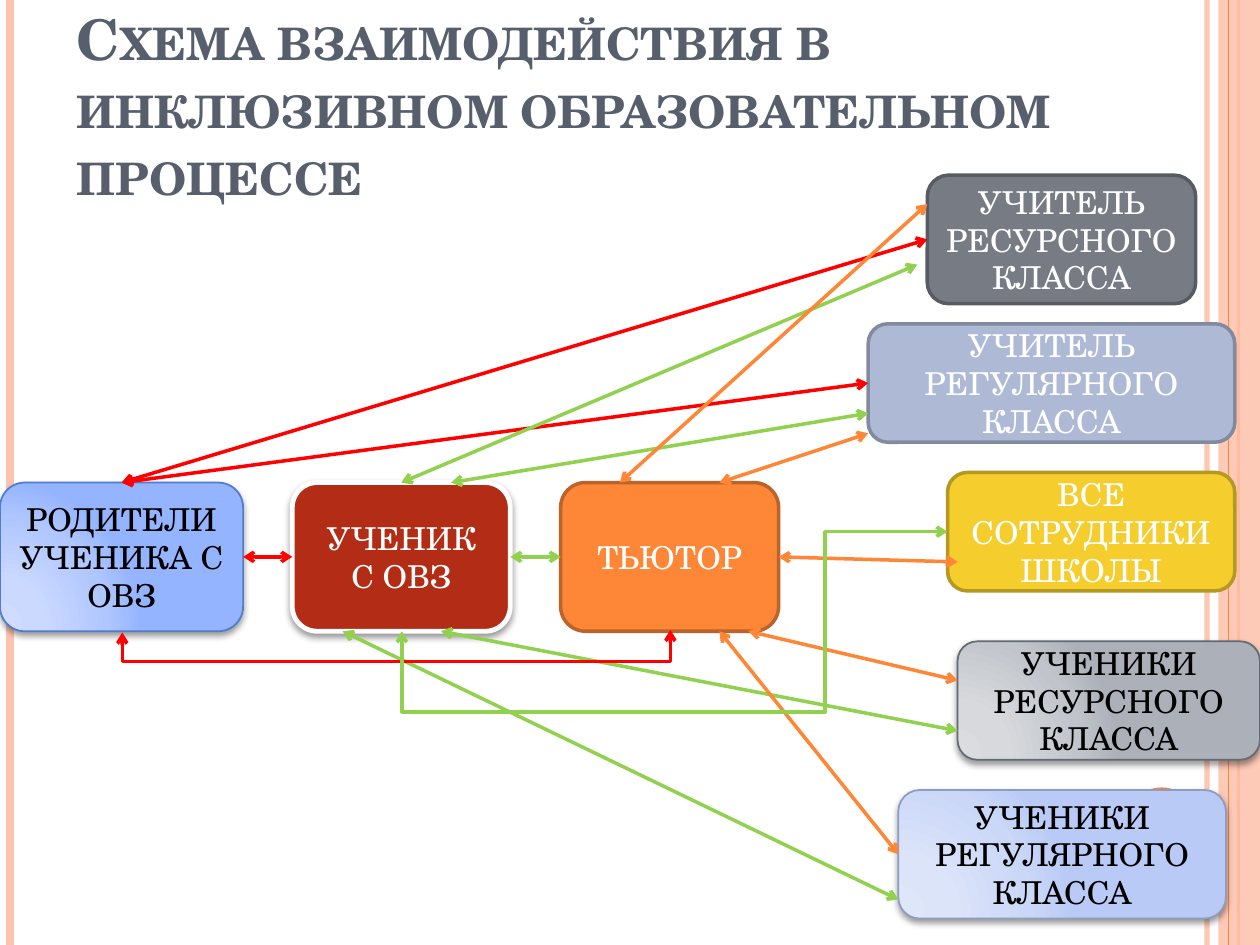
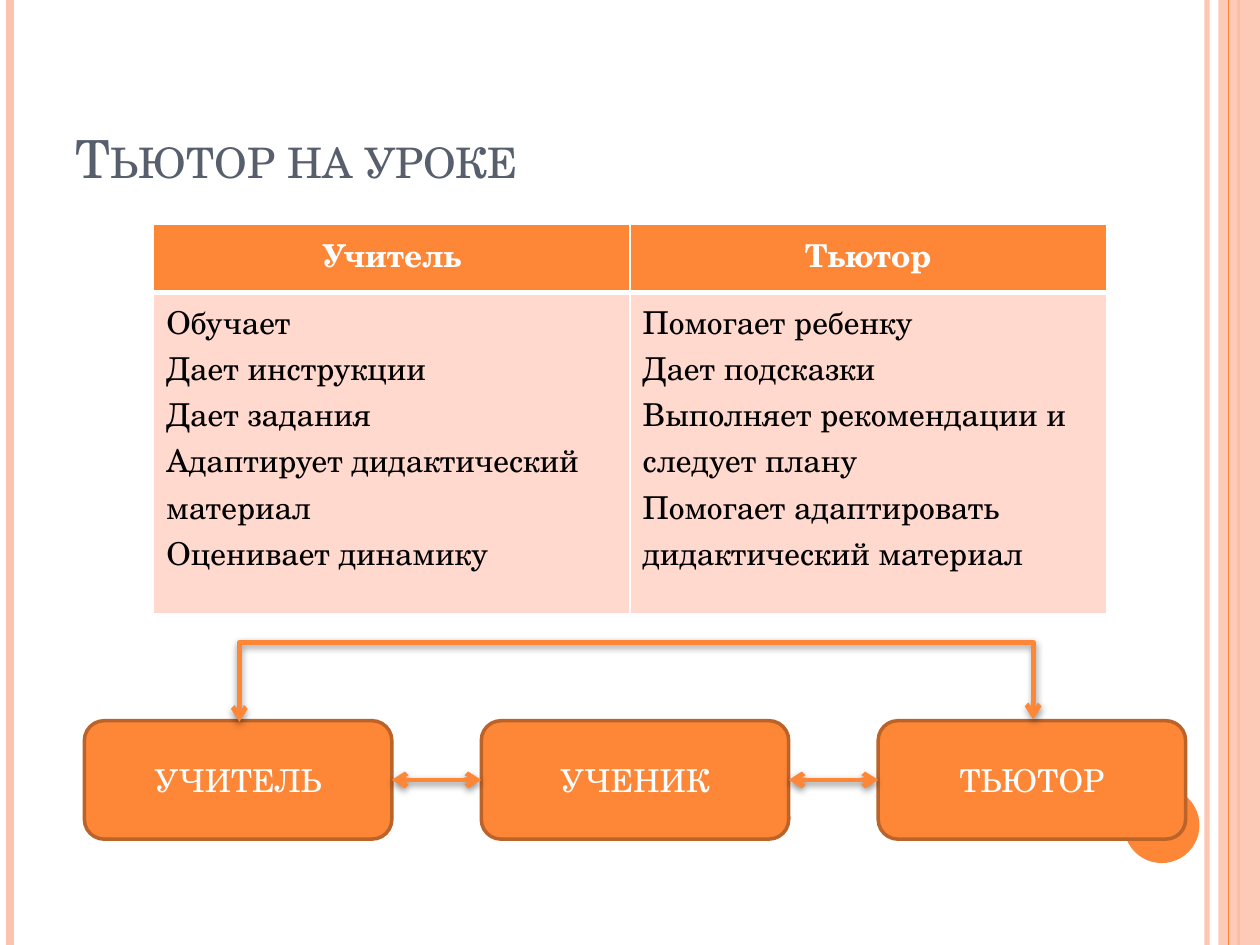
from itertools import pairwise

from lxml import etree
from pptx import Presentation
from pptx.dml.color import RGBColor
from pptx.enum.shapes import MSO_CONNECTOR, MSO_SHAPE
from pptx.enum.text import MSO_ANCHOR, MSO_AUTO_SIZE, PP_ALIGN
from pptx.oxml import parse_xml
from pptx.oxml.ns import nsdecls, qn
from pptx.util import Inches, Pt

# Enum members
LINE, ELBOW = MSO_CONNECTOR.STRAIGHT, MSO_CONNECTOR.ELBOW
ROUND, RECT, OVAL = MSO_SHAPE.ROUNDED_RECTANGLE, MSO_SHAPE.RECTANGLE, MSO_SHAPE.OVAL
LEFT, MID = PP_ALIGN.LEFT, PP_ALIGN.CENTER
BASE, CORE = MSO_ANCHOR.BOTTOM, MSO_ANCHOR.MIDDLE
FIXED = MSO_AUTO_SIZE.NONE

# Sides of a box
TOP, WEST, EAST = 0, 1, 3

# The slide is a grid of 100 columns and 75 rows
COLS, ROWS = 100, 75
FONT = "TeX Gyre Schola"

# Colours
WHITE = RGBColor(0xFF, 0xFF, 0xFF)
BLACK = RGBColor(0x00, 0x00, 0x00)
SLATE = RGBColor(0x57, 0x5F, 0x6D)
PEACH = RGBColor(0xFE, 0xC3, 0xAE)
PALE = RGBColor(0xFF, 0xD9, 0xCE)
ORANGE = RGBColor(0xFE, 0x86, 0x37)
RUST = RGBColor(0xBC, 0x63, 0x29)
RED = RGBColor(0xFF, 0x00, 0x00)
GREEN = RGBColor(0x92, 0xD0, 0x50)
BRICK = RGBColor(0xB3, 0x2C, 0x16)
GREY = RGBColor(0x77, 0x7C, 0x84)
COAL = RGBColor(0x58, 0x5C, 0x62)
STEEL = RGBColor(0xAE, 0xBA, 0xD5)
DUSK = RGBColor(0x81, 0x8A, 0x9E)
GOLD = RGBColor(0xF5, 0xCD, 0x2D)
OLIVE = RGBColor(0xB5, 0x98, 0x21)
BLUE = RGBColor(0x4F, 0x7C, 0xCF)
MIST = RGBColor(0x8D, 0x9C, 0xBF)
LEAD = RGBColor(0x63, 0x6A, 0x74)

# Shades of the glowing boxes, at 0, 30, 75 and 100 percent
STOPS = (0, 30, 75, 100)
SKY = [RGBColor.from_string(c) for c in ("CFDCFF", "CBD9FF", "AFC6FF", "95B4FF")]
ICE = [RGBColor.from_string(c) for c in ("DEE6FA", "DBE4F9", "CAD7F7", "B8CAF5")]
ASH = [RGBColor.from_string(c) for c in ("DADCE0", "D7D9DD", "C1C5CB", "ABB0B9")]


def grid(*cells):
    return [Inches(n / 10) for n in cells]


# Text
def write(frame, text, size=18, color=BLACK, bold=False, align=LEFT, small=False):
    frame.word_wrap = True
    frame.text = text
    for para in frame.paragraphs:
        para.alignment = align
        font = para.runs[0].font
        font.name, font.size, font.bold = FONT, Pt(size), bold
        font.color.rgb = color
        if small:
            para.runs[0]._r.get_or_add_rPr().set("cap", "small")


# Effects
def fade(part, share):
    for tint in part.iter(qn("a:srgbClr")):
        etree.SubElement(tint, qn("a:alpha"), val=str(share * 1000))


def shade(props, alpha, blur, dist):
    props.find(qn("a:effectLst")).append(parse_xml(
        f'<a:outerShdw {nsdecls("a")} blurRad="{Pt(blur)}" dist="{Pt(dist)}" '
        f'dir="5400000" rotWithShape="0"><a:srgbClr val="{BLACK}">'
        f'<a:alpha val="{alpha * 1000}"/></a:srgbClr></a:outerShdw>'))


def glow(shape, tints):
    shape.fill.gradient()
    old = shape._element.spPr.find(qn("a:gradFill"))
    stops = "".join(f'<a:gs pos="{at * 1000}"><a:srgbClr val="{tint}"/></a:gs>'
                    for at, tint in zip(STOPS, tints))
    new = parse_xml(
        f'<a:gradFill {nsdecls("a")} rotWithShape="1"><a:gsLst>{stops}</a:gsLst>'
        '<a:path path="circle"><a:fillToRect l="5000" t="100000" r="120000" '
        'b="10000"/></a:path></a:gradFill>')
    old.getparent().replace(old, new)


# Shapes
def block(slide, kind, place, fill):
    shape = slide.shapes.add_shape(kind, *grid(*place))
    shape.shadow.inherit = False
    if isinstance(fill, list):
        glow(shape, fill)
    else:
        shape.fill.solid()
        shape.fill.fore_color.rgb = fill
    shape.line.fill.background()
    return shape


def box(slide, place, text, fill, edge, width=2, color=WHITE, raised=False):
    shape = block(slide, ROUND, place, fill)
    shape.line.color.rgb = edge
    shape.line.width = Pt(width)
    if raised:
        shade(shape._element.spPr, 40, 4, 2)
    shape.text_frame.vertical_anchor = CORE
    write(shape.text_frame, text, color=color, align=MID)
    return shape


# Lines and arrows
def stroke(line, color, width, heads=False, raised=False):
    line.line.color.rgb = color
    line.line.width = Pt(width)
    props = line._element.spPr
    if heads:
        for end in ("a:headEnd", "a:tailEnd"):
            etree.SubElement(props.find(qn("a:ln")), qn(end), type="arrow")
    etree.SubElement(props, qn("a:effectLst"))
    if raised:
        shade(props, 42, 4, 1.6)


def link(slide, start, end, color, width=2, raised=False):
    """Join two ends, each a grid point or a (box, side) pair."""
    line = slide.shapes.add_connector(LINE, 0, 0, 0, 0)
    if hasattr(start[0], "left"):
        line.begin_connect(*start)
    else:
        line.begin_x, line.begin_y = grid(*start)
    if hasattr(end[0], "left"):
        line.end_connect(*end)
    else:
        line.end_x, line.end_y = grid(*end)
    stroke(line, color, width, True, raised)


def bend(slide, start, end, color, row, col=None, width=2, raised=False):
    """Leave start upright, run along a row and, if given, turn at a column."""
    (x1, y1), (x2, y2) = start, end
    wide, tall = y1 - y2, x2 - x1
    left, top = (x1 + x2 - wide) / 2, (y1 + y2 - tall) / 2
    line = slide.shapes.add_connector(
        ELBOW, *grid(left, top, left + wide, top + tall))
    frame = line._element.spPr.find(qn("a:xfrm"))
    for key, val in (("rot", "5400000"), ("flipH", "1"), ("flipV", "1")):
        frame.set(key, val)
    turns = [(y1 - row) / wide]
    if col is not None:
        turns.append((col - x1) / tall)
    form = line._element.spPr.find(qn("a:prstGeom"))
    form.set("prst", f"bentConnector{2 + len(turns)}")
    guides = form.get_or_add_avLst()
    for i, turn in enumerate(turns, 1):
        etree.SubElement(guides, qn("a:gd"), name=f"adj{i}",
                         fmla=f"val {round(turn * 100000)}")
    stroke(line, color, width, True, raised)


# Shared frame of a slide
def band(slide, col, color, width):
    line = slide.shapes.add_connector(LINE, *grid(col, 0, col, ROWS))
    stroke(line, color, width)
    return line


def start_slide(deck, title, place, **style):
    slide = deck.slides.add_slide(deck.slide_layouts[5])
    fade(band(slide, 95.8, PEACH, 3)._element, 93)
    band(slide, 0.83, PEACH, 4.5)
    band(slide, 98.3, ORANGE, 1.5)
    fade(block(slide, RECT, (96.7, 0, 3.3, ROWS), PEACH)._element, 87)
    band(slide, 97.5, ORANGE, 0.75)
    block(slide, OVAL, (89.2, 62.5, 6, 6), ORANGE)
    head = slide.shapes.title
    head.left, head.top, head.width, head.height = grid(*place)
    head.text_frame.auto_size = FIXED
    head.text_frame.vertical_anchor = BASE
    write(head.text_frame, title, color=SLATE, small=True, **style)
    return slide


# Table
def rule(cell, low):
    props = cell._tc.get_or_add_tcPr()
    for side, width in (("L", 1), ("R", 1), ("T", 1), ("B", low)):
        props.append(parse_xml(
            f'<a:ln{side} {nsdecls("a")} w="{Pt(width)}"><a:solidFill>'
            f'<a:srgbClr val="{WHITE}"/></a:solidFill></a:ln{side}>'))


def list_roles(slide, place, heads, duties, heights):
    table = slide.shapes.add_table(2, len(heads), *grid(*place)).table
    for row, height in zip(table.rows, grid(*heights)):
        row.height = height
    looks = ((heads, ORANGE, 3, dict(color=WHITE, bold=True, align=MID)),
             (duties, PALE, 1, {}))
    for r, (texts, fill, low, style) in enumerate(looks):
        for c, text in enumerate(texts):
            cell = table.cell(r, c)
            rule(cell, low)
            cell.fill.solid()
            cell.fill.fore_color.rgb = fill
            write(cell.text_frame, text, **style)


def draw_scheme(deck):
    slide = start_slide(
        deck, "Схема взаимодействия в инклюзивном образовательном процессе",
        (5.1, 4.4, 90, 12.5), size=32, bold=True)
    top, tall = 38.3, 11.8
    low = top + tall
    soft = dict(width=1, color=BLACK, raised=True)

    # Family, pupil and tutor
    home = box(slide, (0, top, 19.3, tall), "РОДИТЕЛИ УЧЕНИКА С ОВЗ", SKY, BLUE, **soft)
    pupil = box(slide, (23.2, top, 17.3, tall), "УЧЕНИК С ОВЗ", BRICK, WHITE,
                width=2.75, raised=True)
    tutor = box(slide, (44.5, top, 17.3, tall), "ТЬЮТОР", ORANGE, RUST)

    # People at school
    coach = box(slide, (73.6, 13.9, 21.3, 10.2), "УЧИТЕЛЬ РЕСУРСНОГО КЛАССА", GREY, COAL)
    teach = box(slide, (68.9, 25.7, 29.1, 9.4), "УЧИТЕЛЬ РЕГУЛЯРНОГО КЛАССА", STEEL, DUSK)
    peers = box(slide, (71.3, 62.7, 26, 10.2), "УЧЕНИКИ РЕГУЛЯРНОГО КЛАССА", ICE, MIST, **soft)
    box(slide, (76, 50.9, 24, 9.4), "УЧЕНИКИ РЕСУРСНОГО КЛАССА", ASH, LEAD, **soft)
    box(slide, (75.2, 37.5, 22.8, 9.4), "ВСЕ СОТРУДНИКИ ШКОЛЫ", GOLD, OLIVE)

    # Links of the family, the pupil and the tutor
    for start, end, color in (
            ((home, EAST), (pupil, WEST), RED),
            ((pupil, EAST), (tutor, WEST), GREEN),
            ((home, TOP), (coach, WEST), RED),
            ((home, TOP), (teach, WEST), RED),
            ((pupil, TOP), (72.8, 21), GREEN),
            ((35.8, top), (68.9, 32.8), GREEN),
            ((27.2, low), (71.3, 71.4), GREEN),
            ((35, low), (76, 58), GREEN),
            ((49.2, top), (73.6, 16.2), ORANGE),
            ((57.1, top), (68.9, 34.4), ORANGE),
            ((tutor, EAST), (76, 44.6), ORANGE),
            ((59.4, low), (76, 54), ORANGE),
            ((57.1, low), (peers, WEST), ORANGE)):
        link(slide, start, end, color)
    bend(slide, (9.7, 50.2), (53.2, 50), RED, 52.5)
    bend(slide, (31.9, low), (75.2, 42.2), GREEN, 56.5, 65.5)


def draw_lesson(deck):
    slide = start_slide(deck, "Тьютор на уроке", (5, 3, 81.7, 12.5), size=30)
    list_roles(
        slide, (12.2, 17.8, 75.6, 30.9), ("Учитель", "Тьютор"),
        ("Обучает\nДает инструкции\nДает задания\n"
         "Адаптирует дидактический материал\nОценивает динамику",
         "Помогает ребенку\nДает подсказки\nВыполняет рекомендации и следует плану\n"
         "Помогает адаптировать дидактический материал"),
        (5.4, 25.5))

    # Roles in a row
    boxes = [box(slide, (6.7 + 31.5 * i, 57.2, 24.4, 9.4), role, ORANGE, RUST)
             for i, role in enumerate(("УЧИТЕЛЬ", "УЧЕНИК", "ТЬЮТОР"))]
    bold = dict(color=ORANGE, width=2.75, raised=True)
    bend(slide, (19, 57.3), (82, 57.1), row=51, **bold)
    for one, two in pairwise(boxes):
        link(slide, (one, EAST), (two, WEST), **bold)


def main():
    deck = Presentation()
    deck.slide_width, deck.slide_height = grid(COLS, ROWS)
    draw_scheme(deck)
    draw_lesson(deck)
    deck.save("out.pptx")


if __name__ == "__main__":
    main()
